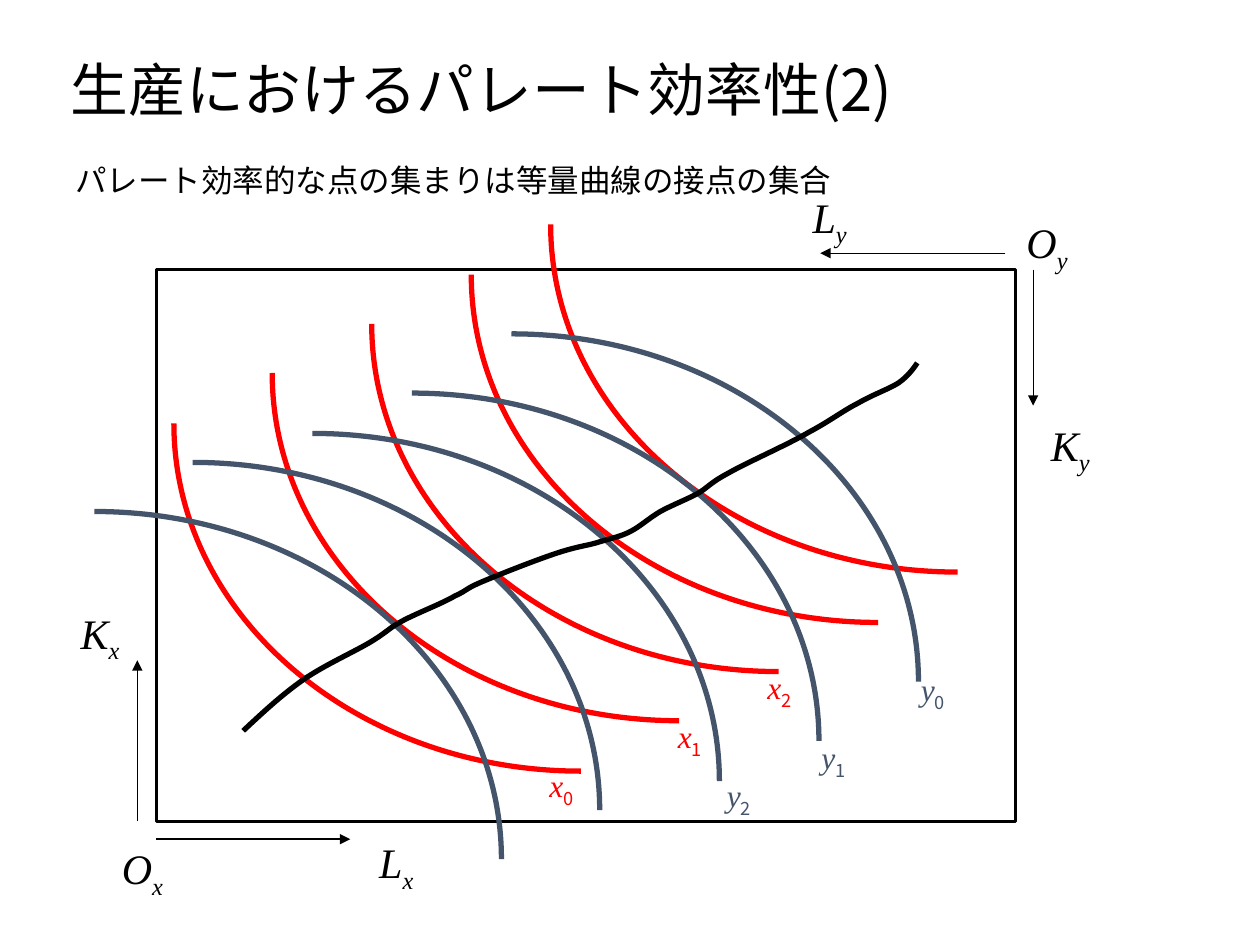
from pptx import Presentation
from pptx import util as u
from pptx.dml.color import RGBColor
from pptx.enum import shapes, text
from pptx.oxml.ns import qn
from pptx.oxml.xmlchemy import OxmlElement

BLACK, RED, SLATE = "000000", "FF0000", "44546A"
SANS, SERIF = "Noto Sans CJK JP", "Times New Roman"
ARC_WIDTH, ARC_HEIGHT = 3.23, 2.76

# Top left corners of the isoquants, from the lowest to the highest
Y_ISOQUANTS = [(0.75, 4.06), (1.53, 3.67), (2.48, 3.44), (3.27, 3.12), (4.06, 2.65)]
X_ISOQUANTS = [(1.38, 3.36), (2.16, 2.96), (2.95, 2.57), (3.74, 2.18), (4.37, 1.78)]

# Start point, then two control points and an end point for each segment
CONTRACT_CURVE = [
    (1.93, 5.8), (2.08, 5.66), (2.23, 5.52), (2.4, 5.4),
    (2.57, 5.28), (2.82, 5.17), (2.95, 5.09),
    (3.08, 5.01), (3.08, 4.99), (3.19, 4.93),
    (3.3, 4.87), (3.51, 4.79), (3.61, 4.73),
    (3.72, 4.68), (3.68, 4.68), (3.82, 4.62),
    (3.96, 4.56), (4.29, 4.43), (4.45, 4.38),
    (4.61, 4.33), (4.67, 4.33), (4.76, 4.3),
    (4.86, 4.27), (4.92, 4.26), (5, 4.22),
    (5.08, 4.18), (5.14, 4.12), (5.24, 4.06),
    (5.33, 4.01), (5.46, 3.96), (5.55, 3.91),
    (5.64, 3.85), (5.64, 3.83), (5.79, 3.75),
    (5.93, 3.67), (6.25, 3.53), (6.42, 3.43),
    (6.59, 3.34), (6.69, 3.26), (6.81, 3.2),
    (6.93, 3.13), (7.05, 3.09), (7.13, 3.04),
    (7.2, 2.99), (7.24, 2.94), (7.28, 2.88),
]

# Letter, subscript, left, top, width, height
AXIS_LABELS = [
    ("O", "x", 0.8, 6.64, 0.66, 0.5),
    ("O", "y", 7.98, 1.67, 0.66, 0.5),
    ("L", "x", 2.78, 6.59, 0.73, 0.5),
    ("K", "x", 0.43, 4.77, 0.73, 0.9),
    ("L", "y", 6.22, 1.47, 0.73, 0.5),
    ("K", "y", 8.13, 3.28, 0.73, 0.5),
]
AXIS_ARROWS = [
    ((1.24, 6.66), (2.78, 6.66)),
    ((7.98, 2.01), (6.51, 2.01)),
    ((8.2, 2.14), (8.2, 3.22)),
    ((1.09, 6.52), (1.09, 5.24)),
]
CURVE_LABELS = [
    ("x", "0", 4.06, 6.03, RED),
    ("x", "1", 5.08, 5.64, RED),
    ("x", "2", 5.79, 5.25, RED),
    ("y", "0", 7.01, 5.27, SLATE),
    ("y", "1", 6.22, 5.81, SLATE),
    ("y", "2", 5.47, 6.11, SLATE),
]


def color(value):
    return RGBColor.from_string(value)


def place(shape, left, top, width, height):
    shape.left, shape.top = u.Inches(left), u.Inches(top)
    shape.width, shape.height = u.Inches(width), u.Inches(height)


def style_outline(shape, line_color, weight):
    shape.fill.background()
    shape.line.color.rgb = color(line_color)
    shape.line.width = u.Pt(weight)
    shape.shadow.inherit = False


def add_span(para, content, size=18, font=SANS, ink=BLACK, italic=False, baseline=None):
    span = para.add_run()
    span.text = content
    span.font.size = u.Pt(size)
    span.font.name = font
    span.font.italic = italic
    span.font.color.rgb = color(ink)
    properties = span.font._element
    east_asian = OxmlElement("a:ea")
    east_asian.set("typeface", font)
    properties.find(qn("a:latin")).addnext(east_asian)
    if baseline is not None:
        properties.set("baseline", str(baseline * 1000))


def add_box(page, left, top, width, height, align=text.PP_ALIGN.CENTER):
    """Add a text box and return its paragraph."""
    box = page.shapes.add_textbox(*map(u.Inches, (left, top, width, height)))
    box.text_frame.word_wrap = True
    box.text_frame.auto_size = text.MSO_AUTO_SIZE.SHAPE_TO_FIT_TEXT
    para = box.text_frame.paragraphs[0]
    para.alignment = align
    return para


def add_arrow(page, start, end):
    arrow = page.shapes.add_connector(
        shapes.MSO_CONNECTOR.STRAIGHT, *map(u.Inches, start + end))
    arrow.line.color.rgb = color(BLACK)
    arrow.line.width = u.Pt(0.75)
    head = OxmlElement("a:tailEnd")
    head.set("type", "triangle")
    arrow.line._get_or_add_ln().append(head)
    arrow._element.spPr.append(OxmlElement("a:effectLst"))


def add_curve(page, points, line_color):
    """Draw cubic segments through a start point and triples of points."""
    start, *rest = [(u.Inches(x), u.Inches(y)) for x, y in points]
    builder = page.shapes.build_freeform(*start)
    builder.add_line_segments(rest, close=False)
    curve = builder.convert_to_shape()
    # Turn every three straight steps into one cubic segment
    outline = curve._element.find(".//" + qn("a:path"))
    steps = outline.findall(qn("a:lnTo"))
    for index in range(0, len(steps), 3):
        cubic = OxmlElement("a:cubicBezTo")
        for step in steps[index:index + 3]:
            cubic.append(step[0])
            outline.remove(step)
        outline.append(cubic)
    style_outline(curve, line_color, 3)
    return curve


def add_isoquant(page, left, top, line_color, rotation=0):
    """Draw a quarter ellipse from the top left to the bottom right."""
    right, bottom = left + ARC_WIDTH, top + ARC_HEIGHT
    bend = 0.5523
    points = [(left, top), (left + bend * ARC_WIDTH, top),
              (right, bottom - bend * ARC_HEIGHT), (right, bottom)]
    add_curve(page, points, line_color).rotation = rotation


def add_title(page, content):
    title = page.shapes.title
    place(title, 0.46, 0.21, 6.9, 1.05)
    frame = title.text_frame
    frame.auto_size = text.MSO_AUTO_SIZE.NONE
    frame.vertical_anchor = text.MSO_ANCHOR.MIDDLE
    para = frame.paragraphs[0]
    para.alignment = text.PP_ALIGN.LEFT
    para.line_spacing = 0.9
    add_span(para, content, size=33)


def main():
    deck = Presentation()
    deck.slide_width, deck.slide_height = u.Inches(10), u.Inches(7.5)
    page = deck.slides.add_slide(deck.slide_layouts[5])
    add_title(page, "生産におけるパレート効率性(2)")

    # Edgeworth box with its axes
    frame = page.shapes.add_shape(
        shapes.MSO_SHAPE.RECTANGLE, *map(u.Inches, (1.24, 2.14, 6.82, 4.38)))
    style_outline(frame, BLACK, 1.5)
    for start, end in AXIS_ARROWS:
        add_arrow(page, start, end)
    for letter, subscript, *area in AXIS_LABELS:
        para = add_box(page, *area)
        add_span(para, letter, size=24, font=SERIF, italic=True)
        add_span(para, subscript, size=24, font=SERIF, italic=True, baseline=-25)

    # Isoquants of both goods
    for left, top in X_ISOQUANTS:
        add_isoquant(page, left, top, RED, rotation=180)
    for left, top in Y_ISOQUANTS:
        add_isoquant(page, left, top, SLATE)
    for letter, subscript, left, top, ink in CURVE_LABELS:
        para = add_box(page, left, top, 0.79, 0.4)
        add_span(para, letter, font=SERIF, ink=ink, italic=True)
        add_span(para, subscript, ink=ink, baseline=-25)

    # Pareto efficient points
    add_curve(page, CONTRACT_CURVE, BLACK)
    para = add_box(page, 0.5, 1.23, 6.82, 0.4, align=text.PP_ALIGN.LEFT)
    add_span(para, "パレート効率的な点の集まりは等量曲線の接点の集合")

    deck.save("out.pptx")


if __name__ == "__main__":
    main()
